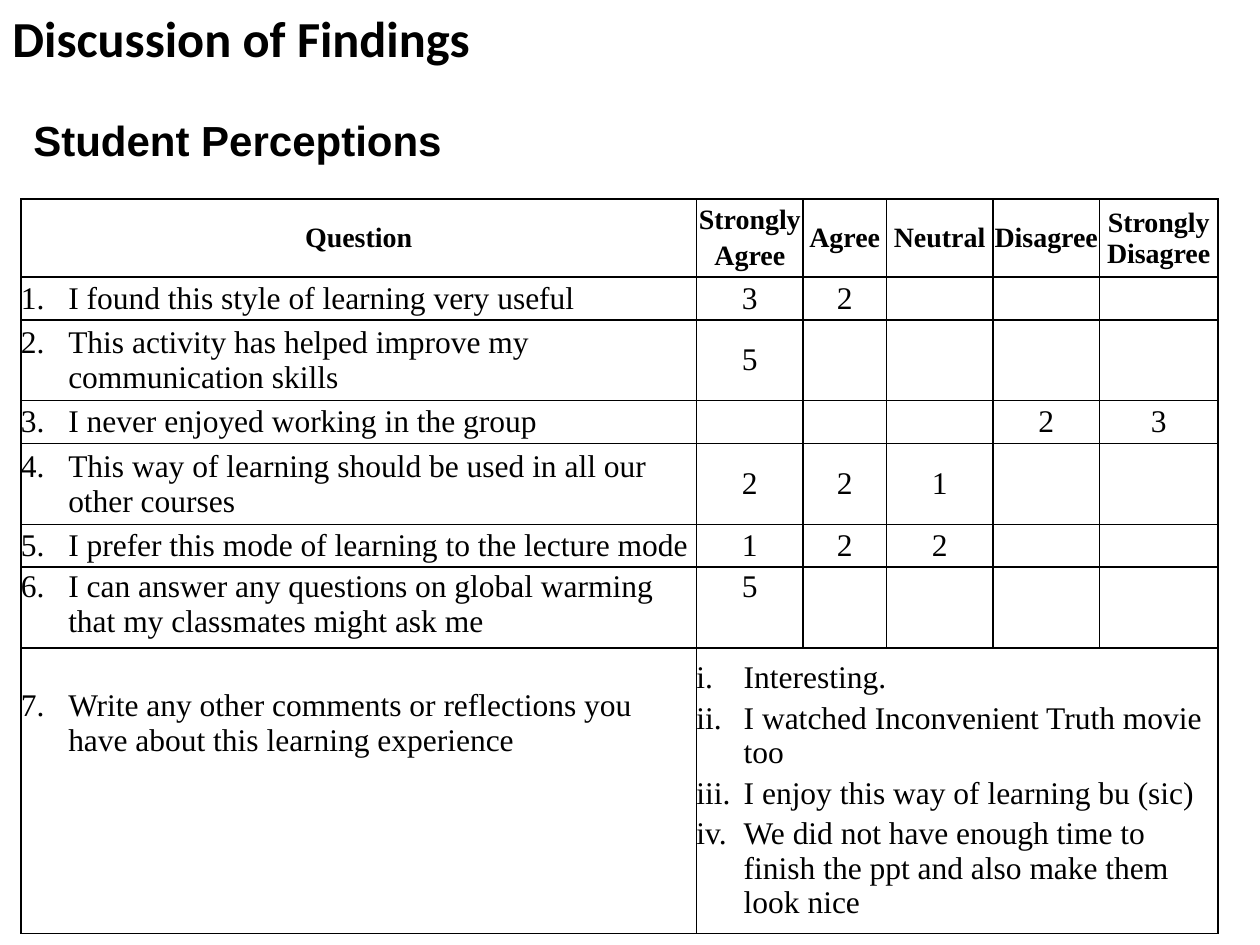
from dataclasses import dataclass, field

from lxml import etree
from pptx import Presentation
from pptx.dml.color import RGBColor
from pptx.enum import text
from pptx.oxml import ns
from pptx.slide import Slide
from pptx.util import Pt

QUESTIONS = [
    ("I found this style of learning very useful", "3", "2", "", "", ""),
    ("This activity has helped improve my communication skills", "5", "", "", "", ""),
    ("I never enjoyed working in the group", "", "", "", "2", "3"),
    ("This way of learning should be used in all our other courses", "2", "2", "1", "", ""),
    ("I prefer this mode of learning to the lecture mode", "1", "2", "2", "", ""),
    ("I can answer any questions on global warming that my classmates might ask me",
     "5", "", "", "", ""),
    ("Write any other comments or reflections you have about this learning experience",
     "", "", "", "", ""),
]
SCALE = ["Question", "Strongly\nAgree", "Agree", "Neutral", "Disagree", "Strongly Disagree"]
COMMENTS = [
    "Interesting.",
    "I watched Inconvenient Truth movie too",
    "I enjoy this way of learning bu (sic)",
    "We did not have enough time to finish the ppt and also make them look nice",
]


@dataclass
class SlideWriter:
    """Draws styled text and a ruled table on the current slide."""

    slide: Slide
    colours: dict = field(default_factory=lambda: {"ink": "000000"})
    body: str = "Times New Roman"

    def style(self, paragraph, size, name, bold):
        for run in paragraph.runs:
            run.font.size = Pt(size)
            run.font.name = name
            run.font.bold = bold
            run.font.color.rgb = RGBColor.from_string(self.colours["ink"])

    def heading(self, wording, left, top, width, height, size, name):
        frame = self.slide.shapes.add_textbox(
            Pt(left), Pt(top), Pt(width), Pt(height)).text_frame
        frame.word_wrap = True
        frame.vertical_anchor = text.MSO_ANCHOR.MIDDLE
        frame.text = wording
        self.style(frame.paragraphs[0], size, name, True)

    def table(self, left, top, widths, heights):
        grid = self.slide.shapes.add_table(
            len(heights), len(widths), Pt(left), Pt(top),
            Pt(sum(widths)), Pt(sum(heights))).table
        grid.first_row = grid.horz_banding = False
        for column, width in zip(grid.columns, widths):
            column.width = Pt(width)
        for row, height in zip(grid.rows, heights):
            row.height = Pt(height)
        for cell in grid.iter_cells():
            cell.margin_left = cell.margin_right = 0
            cell.margin_top = cell.margin_bottom = Pt(1.44)
            cell.vertical_anchor = text.MSO_ANCHOR.MIDDLE
            cell.fill.background()
            self.border(cell)
        return grid

    def border(self, cell):
        properties = cell._tc.get_or_add_tcPr()
        for place, side in enumerate(("lnL", "lnR", "lnT", "lnB")):
            line = etree.Element(ns.qn(f"a:{side}"), w=str(Pt(1)))
            fill = etree.SubElement(line, ns.qn("a:solidFill"))
            etree.SubElement(fill, ns.qn("a:srgbClr"), val=self.colours["ink"])
            properties.insert(place, line)

    def entry(self, cell, wording, size=18, bold=False):
        if not wording:
            return
        cell.text_frame.text = wording
        for paragraph in cell.text_frame.paragraphs:
            paragraph.alignment = text.PP_ALIGN.CENTER
            paragraph.space_after = Pt(3)
            self.style(paragraph, size, self.body, bold)

    def numbered(self, cell, items, scheme, start=1):
        cell.text_frame.text = "\n".join(items)
        for paragraph in cell.text_frame.paragraphs:
            paragraph.space_after = Pt(3)
            properties = paragraph._p.get_or_add_pPr()
            properties.set("marL", str(Pt(27)))
            properties.set("indent", str(Pt(-27)))
            number = etree.SubElement(properties, ns.qn("a:buAutoNum"), type=scheme)
            if start > 1:
                number.set("startAt", str(start))
            self.style(paragraph, 18, self.body, False)


def main():
    deck = Presentation()
    deck.slide_width, deck.slide_height = Pt(720), Pt(540)
    writer = SlideWriter(deck.slides.add_slide(deck.slide_layouts[6]))

    writer.heading("Discussion of Findings", 0, 0, 718.5, 42.5, 28.8, "Calibri")
    writer.heading("Student Perceptions", 12, 62, 534, 36, 24, "Arial")

    single, double = 24.5, 46.2
    survey = writer.table(
        12, 113.8, [386, 61, 47.5, 61, 61, 67.5],
        [44.5, single, double, single, double, single, double, 163])
    for column, label in enumerate(SCALE):
        writer.entry(survey.cell(0, column), label, 16, True)
    for number, (question, *counts) in enumerate(QUESTIONS, 1):
        writer.numbered(survey.cell(number, 0), [question], "arabicPeriod", number)
        for column, count in enumerate(counts, 1):
            writer.entry(survey.cell(number, column), count)

    for column in range(6):
        survey.cell(6, column).vertical_anchor = text.MSO_ANCHOR.TOP
    survey.cell(7, 0).margin_bottom = Pt(78)
    reflections = survey.cell(7, 1)
    reflections.merge(survey.cell(7, 5))
    writer.numbered(reflections, COMMENTS, "romanLcPeriod")

    deck.save("out.pptx")


if __name__ == "__main__":
    main()
